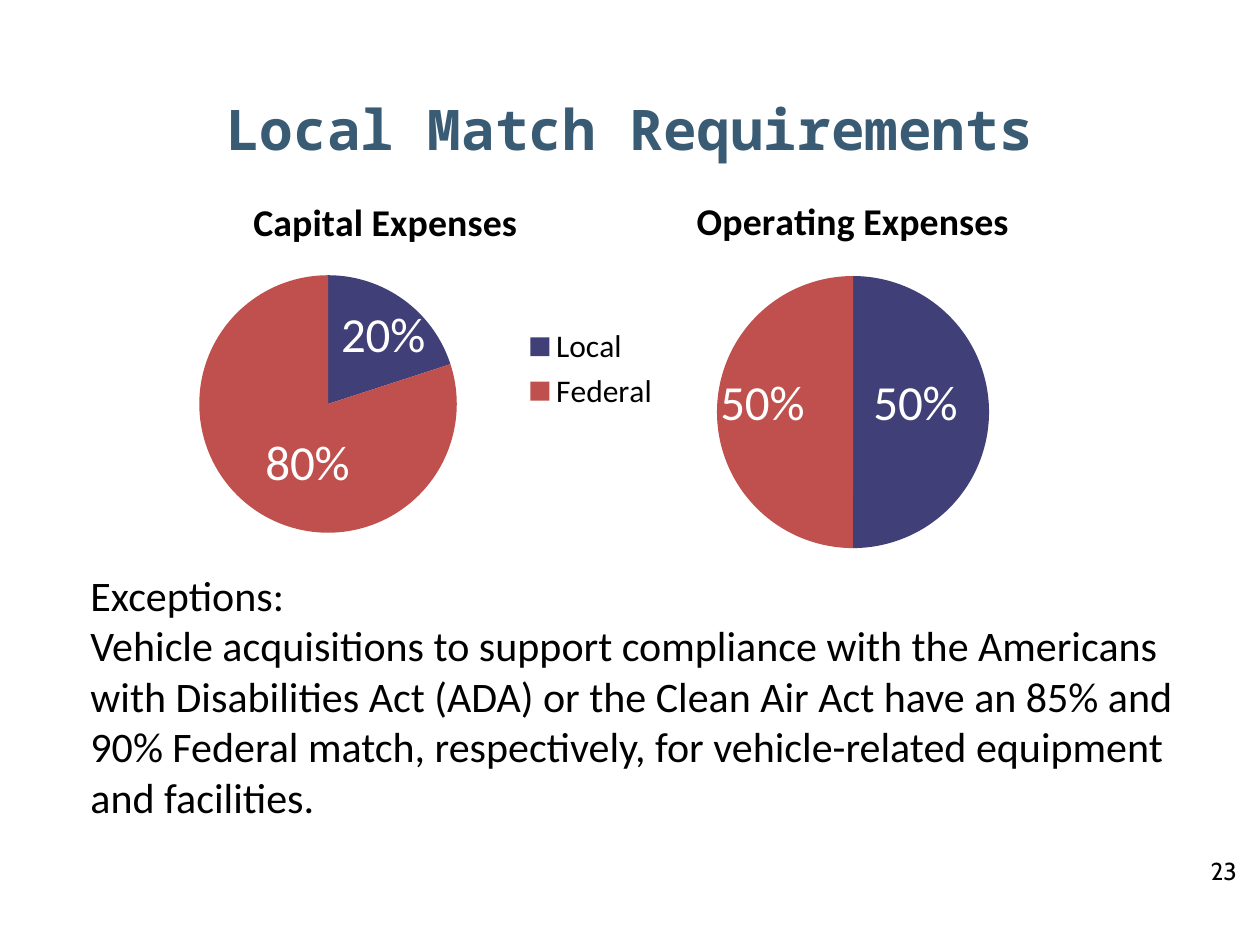
from dataclasses import dataclass

from lxml.etree import SubElement as Sub
from pptx import Presentation
from pptx.chart.data import CategoryChartData as ChartData
from pptx.dml.color import RGBColor
from pptx.enum.chart import XL_CHART_TYPE as Kind, XL_LEGEND_POSITION as Side
from pptx.enum.chart import XL_LABEL_POSITION as Spot
from pptx.enum.text import MSO_ANCHOR as Anchor, PP_ALIGN as Align
from pptx.oxml.ns import qn
from pptx.util import Inches, Pt

WIDE, HIGH = Inches(10), Inches(7.5)
BLACK = RGBColor(0, 0, 0)
WHITE = RGBColor(255, 255, 255)
TEAL = RGBColor(0x39, 0x5B, 0x74)
NAVY = RGBColor(0x41, 0x3F, 0x77)
RED = RGBColor(0xC0, 0x50, 0x4D)

HEAD = dict(name="Noto Sans Mono", size=Pt(32), bold=True, color=TEAL)
BODY = dict(name="Calibri", size=Pt(24), color=BLACK)
PAGE = dict(name="Cabin", size=Pt(14), color=BLACK)
BASE = dict(name="Calibri", size=Pt(18), color=BLACK)
NAME = dict(name="Calibri", size=Pt(21.6), bold=True, color=BLACK)
MARK = dict(name="Calibri", size=Pt(28), color=WHITE)


@dataclass
class Pie:
    title: str
    box: tuple      # shares of the slide
    plot: tuple     # shares of the chart
    cats: tuple
    vals: tuple
    shifts: tuple   # label moves, as shares of the chart
    legend: bool = False


PIES = (
    Pie("Operating Expenses", (0.452, 0.183, 0.45, 0.415),
        (0.26, 0.26, 0.48, 0.7), ("1", "2"), (0.5, 0.5),
        ((-0.01, -0.02), (-0.04, -0.02))),
    Pie("Capital Expenses", (0.078, 0.184, 0.456, 0.413),
        (0.17, 0.26, 0.46, 0.66), ("Local", "Federal"), (0.2, 0.8),
        ((0.03, -0.04), (0.03, 0.02)), True),
)


def style(font, form: dict) -> None:
    for key, val in form.items():
        if key == "color":
            font.color.rgb = val
        else:
            setattr(font, key, val)


def area(box: tuple) -> tuple:
    """Turn shares of the slide into lengths."""
    return tuple(int(part * size) for part, size in zip(box, (WIDE, HIGH) * 2))


def lay_out(node, at: int, vals: dict) -> None:
    """Give a chart part a manual layout as its child number at."""
    old = node.find(qn("c:layout"))
    if old is not None:
        node.remove(old)
    lay = node.makeelement(qn("c:layout"))
    node.insert(at, lay)
    man = Sub(lay, qn("c:manualLayout"))
    for tag, val in vals.items():
        Sub(man, qn(f"c:{tag}")).set("val", str(val))


def add_pie(slide, pie: Pie) -> None:
    data = ChartData(number_format="0%")
    data.categories = pie.cats
    data.add_series("Series 1", pie.vals)
    chart = slide.shapes.add_chart(Kind.PIE, *area(pie.box), data).chart
    style(chart.font, BASE)
    chart.has_title = True
    chart.chart_title.include_in_layout = False
    frame = chart.chart_title.text_frame
    frame.text = pie.title
    style(frame.paragraphs[0].runs[0].font, NAME)
    chart.has_legend = pie.legend
    if pie.legend:
        chart.legend.position = Side.RIGHT
        chart.legend.include_in_layout = False

    left, top, wide, high = pie.plot
    lay_out(chart.plots[0]._element.getparent(), 0, dict(
        layoutTarget="inner", xMode="edge", yMode="edge",
        x=left, y=top, w=wide, h=high))

    series = chart.plots[0].series[0]
    marks = series.data_labels
    marks.show_value = True
    marks.number_format, marks.number_format_is_linked = "0%", False
    style(marks.font, MARK)
    for i, (color, (x, y)) in enumerate(zip((NAVY, RED), pie.shifts)):
        point = series.points[i]
        point.format.fill.solid()
        point.format.fill.fore_color.rgb = color
        label = point.data_label
        style(label.font, MARK)
        label.position = Spot.CENTER
        node = series._element.findall(".//" + qn("c:dLbl"))[i]
        lay_out(node, 1, dict(x=x, y=y))


def add_text(slide, box: tuple, lines: tuple, form: dict) -> None:
    frame = slide.shapes.add_textbox(*area(box)).text_frame
    frame.word_wrap = True
    frame.text = "\n".join(lines)
    for par in frame.paragraphs:
        style(par.runs[0].font, form)


def add_head(slide, box: tuple, text: str) -> None:
    head = slide.shapes.title
    head.left, head.top, head.width, head.height = area(box)
    frame = head.text_frame
    frame.text, frame.vertical_anchor = text, Anchor.MIDDLE
    frame.paragraphs[0].alignment = Align.CENTER
    style(frame.paragraphs[0].runs[0].font, HEAD)


def main() -> None:
    deck = Presentation()
    deck.slide_width, deck.slide_height = WIDE, HIGH
    slide = deck.slides.add_slide(deck.slide_layouts[5])
    add_text(slide, (0.951, 0.899, 0.058, 0.1), ("23",), PAGE)
    add_head(slide, (0.05, 0.064, 0.9, 0.143), "Local Match Requirements")
    for pie in PIES:
        add_pie(slide, pie)
    add_text(slide, (0.062, 0.596, 0.9, 0.323), (
        "Exceptions:",
        "Vehicle acquisitions to support compliance with the Americans with "
        "Disabilities Act (ADA) or the Clean Air Act have an 85% and 90% "
        "Federal match, respectively, for vehicle-related equipment and "
        "facilities."), BODY)
    deck.save("out.pptx")


if __name__ == "__main__":
    main()
